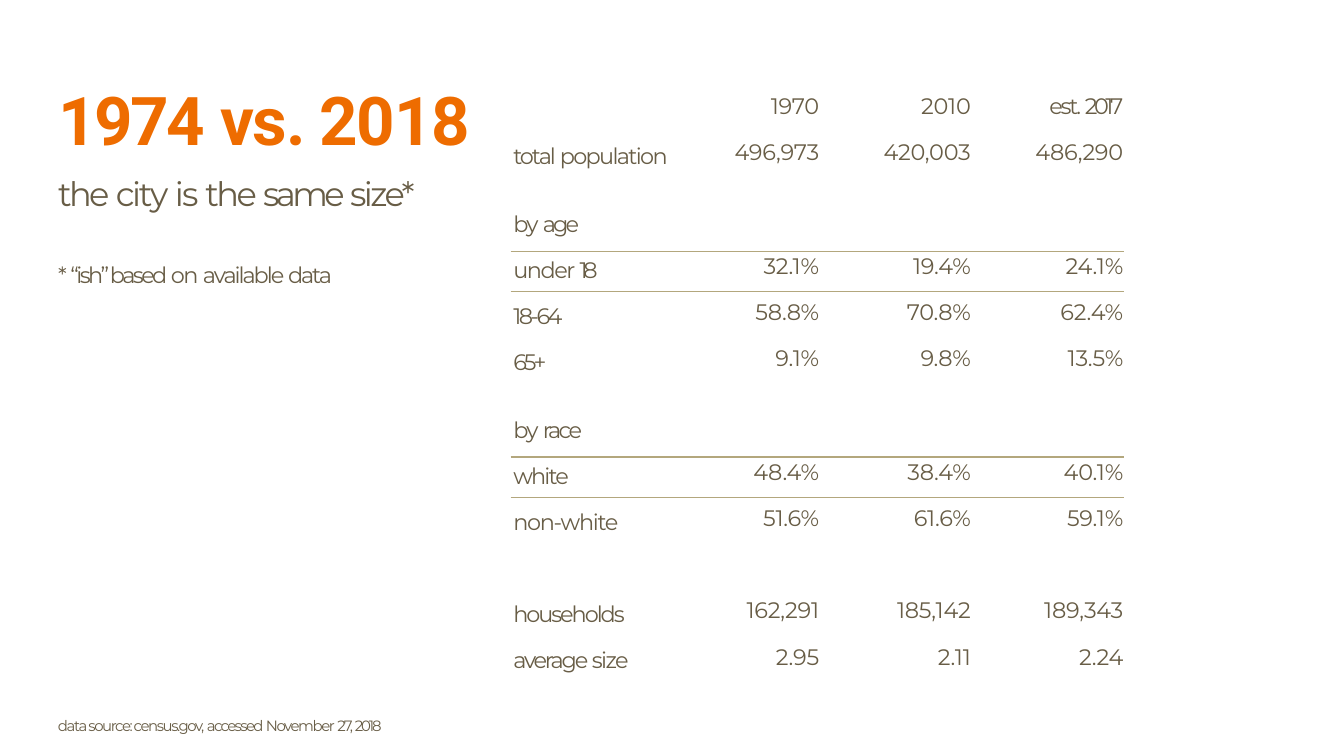
from lxml.etree import SubElement
from pptx import Presentation
from pptx.dml.color import RGBColor
from pptx.enum.text import PP_ALIGN as Align
from pptx.oxml.ns import qn
from pptx.util import Pt

COLORS = {"orange": "EE6C00", "brown": "685D46", "rule": "B3A77D"}
BODY_FONT, TITLE_FONT = "Montserrat", "Roboto"

COLUMN_WIDTHS = (105.8, 77, 79.2, 66.7)
RIGHT_MARGINS = (0, 17.5, 15.5, 0.5)
FIGURE_SPACING = -0.1
RULED_ROWS = (3, 7)

# label runs, figures, row height, label top margin, figure top margin
ROWS = [
    ([], ("1970", "2010", [("est. ", -1.2), ("2017", -1.8)]), 20.2, 0, 0.6),
    ([("total ", -1.1), ("population", -0.9)],
     ("496,973", "420,003", "486,290"), 33.1, 7.5, 5.2),
    ([("by ", -0.9), ("age", -1.5)], ("", "", ""), 32.4, 10.8, 0),
    ([("under ", -0.8), ("18", -2.4)], ("32.1%", "19.4%", "24.1%"), 21.6, 3, 0.7),
    ([("18-64", -1.4)], ("58.8%", "70.8%", "62.4%"), 24.5, 6, 3.8),
    ([("65+", -1.6)], ("9.1%", "9.8%", "13.5%"), 31.7, 6, 3.8),
    ([("by ", -0.9), ("race", -1.4)], ("", "", ""), 32.4, 10.8, 0),
    ([("white", -1)], ("48.4%", "38.4%", "40.1%"), 21.6, 3, 0.7),
    ([("non-white", -0.7)], ("51.6%", "61.6%", "59.1%"), 37.4, 6, 3.8),
    ([("households", -1.1)], ("162,291", "185,142", "189,343"), 37.4, 17.8, 16),
    ([("average ", -1.2), ("size", -0.9)], ("2.95", "2.11", "2.24"), 21.6, 5, 3.8),
]

HEADLINE = [("1974 ", -1.2), ("vs. 2018", -0.7)]
SUBTITLE = [("the ", -1.4), ("city ", -1.2), ("is ", -1), ("the ", -1.4),
            ("same ", -1.9), ("size*", -1.4)]
FOOTNOTE = [("* ", -1.1), ("“ish” based ", -1.4), ("on ", -0.8),
            ("available ", -1.1), ("data", -1.2)]
DATA_SOURCE = [("data source: census.gov, ", -0.8), ("accessed ", -0.9),
               ("November ", -0.8), ("27, ", -1.1), ("2018", -1.2)]


def write_runs(paragraph, runs, size, color="brown", font=BODY_FONT, bold=False):
    for words, spacing in runs:
        run = paragraph.add_run()
        run.text = words
        run.font.size = Pt(size)
        run.font.name = font
        run.font.bold = bold
        run.font.color.rgb = RGBColor.from_string(COLORS[color])
        run._r.get_or_add_rPr().set("spc", str(round(spacing * 100)))


def add_frame(slide, left, top, width, height, top_margin):
    frame = slide.shapes.add_textbox(Pt(left), Pt(top), Pt(width), Pt(height)).text_frame
    frame.word_wrap = True
    frame.margin_left = Pt(0.9)
    frame.margin_top = Pt(top_margin)
    frame.margin_right = frame.margin_bottom = 0
    return frame


def add_heading(slide, left, top, width, height):
    frame = add_frame(slide, left, top, width, height, 17)
    write_runs(frame.paragraphs[0], HEADLINE, 36, "orange", TITLE_FONT, True)
    subtitle = frame.add_paragraph()
    subtitle.space_before = Pt(7)
    write_runs(subtitle, SUBTITLE, 18)


def add_note(slide, left, top, width, height, runs, size):
    frame = add_frame(slide, left, top, width, height, 1)
    write_runs(frame.paragraphs[0], runs, size)


def set_borders(cell, ruled_sides):
    properties = cell._tc.get_or_add_tcPr()
    for side in "LRTB":
        line = SubElement(properties, qn(f"a:ln{side}"))
        if side in ruled_sides:
            line.set("w", str(Pt(0.75)))
            fill = SubElement(line, qn("a:solidFill"))
            SubElement(fill, qn("a:srgbClr"), val=COLORS["rule"])
        else:
            SubElement(line, qn("a:noFill"))


def fill_cell(cell, runs, top_margin, left_margin, right_margin, align, ruled_sides):
    cell.margin_left = Pt(left_margin)
    cell.margin_top = Pt(top_margin)
    cell.margin_right = Pt(right_margin)
    cell.margin_bottom = 0
    paragraph = cell.text_frame.paragraphs[0]
    paragraph.alignment = align
    write_runs(paragraph, runs, 12)
    if not runs:
        SubElement(paragraph._p, qn("a:endParaRPr"), sz="1200")
    set_borders(cell, ruled_sides)
    cell.fill.background()


def add_census_table(slide, left, top, width, height):
    table = slide.shapes.add_table(len(ROWS), len(COLUMN_WIDTHS), Pt(left), Pt(top),
                                   Pt(width), Pt(height)).table
    table.first_row = table.horz_banding = False
    for column, column_width in zip(table.columns, COLUMN_WIDTHS):
        column.width = Pt(column_width)
    for index, (label, figures, row_height, label_top, figure_top) in enumerate(ROWS):
        table.rows[index].height = Pt(row_height)
        ruled_sides = ""
        if index in RULED_ROWS:
            ruled_sides = "TB"
        elif index + 1 in RULED_ROWS:
            ruled_sides = "B"
        elif index - 1 in RULED_ROWS:
            ruled_sides = "T"
        fill_cell(table.cell(index, 0), label, label_top, 1.4, 0, Align.LEFT, ruled_sides)
        for column, figure in enumerate(figures, 1):
            runs = figure
            if isinstance(figure, str):
                runs = [(figure, FIGURE_SPACING)] if figure else []
            fill_cell(table.cell(index, column), runs, figure_top, 0,
                      RIGHT_MARGINS[column], Align.RIGHT, ruled_sides)


def main():
    deck = Presentation()
    deck.slide_width, deck.slide_height = Pt(720), Pt(405)
    slide = deck.slides.add_slide(deck.slide_layouts[6])
    add_census_table(slide, 273.6, 49, sum(COLUMN_WIDTHS), sum(row[2] for row in ROWS))
    add_heading(slide, 30.2, 25.2, 226.8, 87.8)
    add_note(slide, 30.2, 139, 169.2, 16.6, FOOTNOTE, 12)
    add_note(slide, 30.2, 383, 201.6, 11.5, DATA_SOURCE, 8)
    deck.save("out.pptx")


if __name__ == "__main__":
    main()
